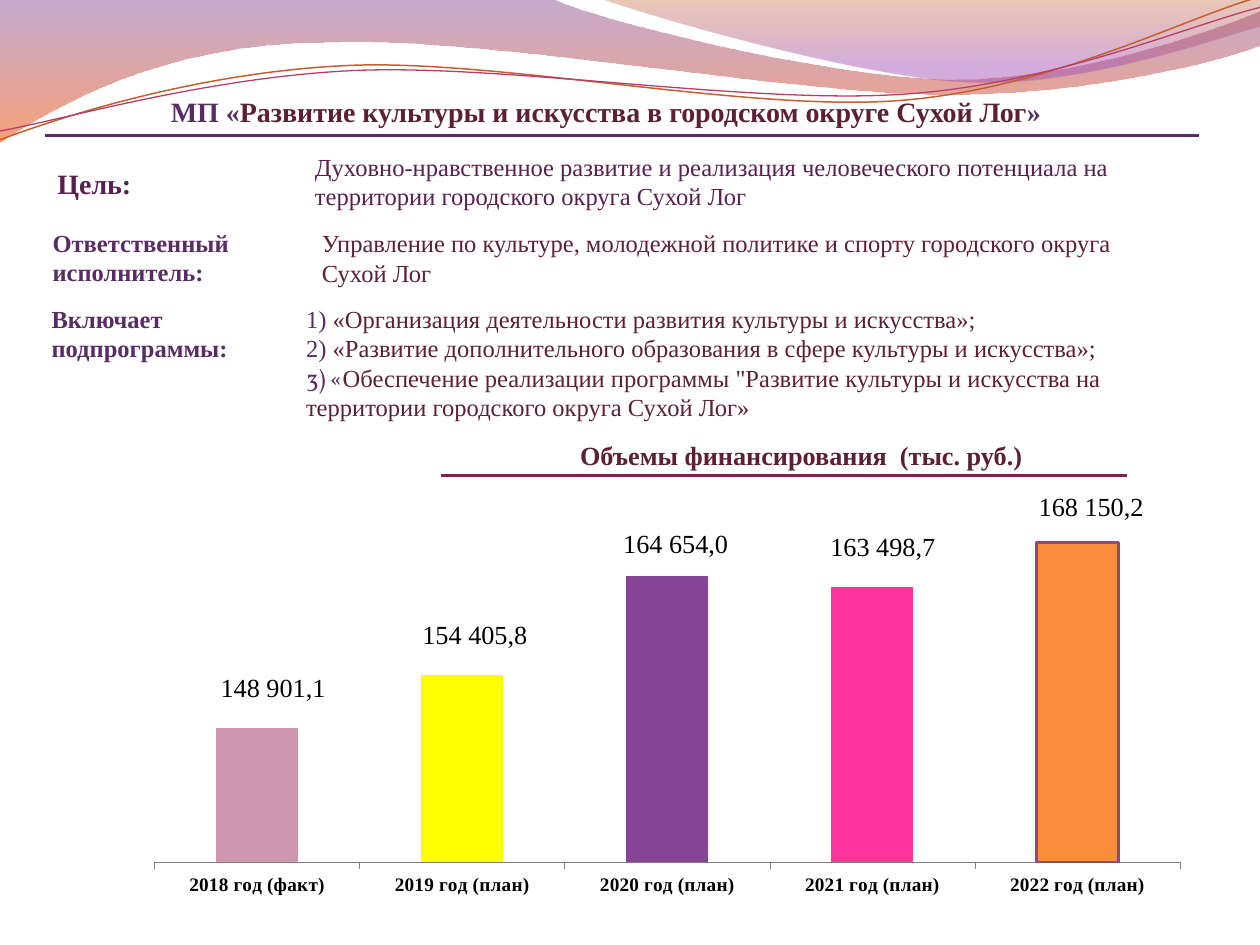
from dataclasses import dataclass

from lxml import etree
from pptx import Presentation
from pptx.chart.data import CategoryChartData
from pptx.dml.color import RGBColor as Rgb
from pptx.enum.chart import XL_CHART_TYPE as ChartType, XL_LABEL_POSITION as LabelPosition
from pptx.enum.chart import XL_TICK_MARK as TickMark
from pptx.enum.shapes import MSO_CONNECTOR as Connector
from pptx.enum.text import PP_ALIGN as Align
from pptx.oxml import parse_xml
from pptx.oxml.ns import nsdecls, qn
from pptx.util import Cm, Pt


@dataclass(frozen=True)
class Theme:
    serif: str = "Times New Roman"
    accent_font: str = "Vollkorn"
    violet: str = "5A2C64"
    plum: str = "591F4D"
    wine: str = "5C1F34"
    rule: str = "772754"
    axis: str = "808080"
    black: str = "000000"
    orange: str = "C45F30"
    pink: str = "B83D68"
    bar_border: str = "8B4A82"
    title: int = 16
    heading: int = 15
    body: int = 14
    axis_size: int = 11


@dataclass(frozen=True)
class Box:
    """A region of the page, in centimetres."""
    left: float
    top: float
    width: float
    height: float

    def inner(self, left, top, width, height):
        return Box(self.left + left, self.top + top, width, height)

    def lengths(self):
        return Cm(self.left), Cm(self.top), Cm(self.width), Cm(self.height)


THEME = Theme()

# Each wave is a start and its segments: one point is a line, three are a Bézier curve.
BACK_WAVE = [(0, 0), [(11.18, 0)],
             [(12.09, 0.43), (16.87, 1.6), (19.25, 1.6)],
             [(21.67, 1.6), (24.33, 0.66), (25.4, 0.23)], [(25.4, 0.91)],
             [(24.97, 1.12), (22.1, 1.93), (18.95, 1.9)],
             [(15.8, 1.9), (9.7, 0.71), (6.53, 0.86)],
             [(3.28, 0.89), (1.17, 2.11), (0, 2.87)]]
FRONT_WAVE = [(12.17, 0), [(12.93, 0.28), (17.32, 1.57), (19.53, 1.65)],
              [(21.74, 1.75), (24.41, 0.81), (25.4, 0.53)], [(25.4, 0)]]
ORANGE_LINE = [(0, 2.82), [(1.22, 2.36), (4.01, 1.45), (7.04, 1.32)],
               [(10.03, 1.19), (15.06, 2.26), (18.11, 2.03)],
               [(21.16, 1.8), (23.83, 0.38), (25.35, -0.05)]]
PINK_LINE = [(0, 2.64), [(1.19, 2.44), (4.17, 1.55), (7.19, 1.42)],
             [(10.24, 1.3), (15.16, 2.11), (18.21, 1.9)],
             [(21.23, 1.7), (23.9, 0.53), (25.4, 0.15)]]

# Category, value, bar colour, label shift as shares of the chart.
FUNDING = [("2018 год (факт)", 148901.1, "CF96B0", 0.015, -0.05),
           ("2019 год (план)", 154405.8, "FFFF00", 0.012, -0.05),
           ("2020 год (план)", 164654, "874396", 0.008, -0.03),
           ("2021 год (план)", 163498.7, "FF3399", 0.01, -0.05),
           ("2022 год (план)", 168150.2, "FA8D3D", 0.013, -0.04)]


def style_font(font, size, color, bold=False, name=THEME.serif):
    font.name, font.size, font.bold = name, Pt(size), bold
    font.color.rgb = Rgb.from_string(color)


def add_text(page, box, paragraphs, size, color, bold=False, align=Align.LEFT):
    """Each paragraph is a list of (text, colour, font); None keeps the paragraph's own."""
    frame = page.shapes.add_textbox(*box.lengths()).text_frame
    frame.word_wrap = True
    for index, spans in enumerate(paragraphs):
        para = frame.add_paragraph() if index else frame.paragraphs[0]
        para.alignment = align
        style_font(para.font, size, color, bold)
        for text, span_color, span_font in spans:
            span = para.add_run()
            span.text = text
            style_font(span.font, size, span_color or color, bold, span_font or THEME.serif)


def add_rule(page, box, color):
    left, top, width, _ = box.lengths()
    rule = page.shapes.add_connector(Connector.STRAIGHT, left, top, left + width, top)
    rule.line.color.rgb, rule.line.width = Rgb.from_string(color), Pt(1.5)
    etree.SubElement(rule._element.spPr, qn("a:effectLst"))


def add_outline(page, box, outline, close):
    """Build the outline through its end points, then bend the curved segments."""
    start, *segments = outline
    ends = [start] + [segment[-1] for segment in segments]
    first, *rest = [(Cm(box.left + x), Cm(box.top + y)) for x, y in ends]
    builder = page.shapes.build_freeform(*first)
    builder.add_line_segments(rest, close=close)
    shape = builder.convert_to_shape()
    shape.shadow.inherit = False
    left, top = (min(end[axis] for end in ends) for axis in (0, 1))
    lines = shape._element.findall(".//" + qn("a:lnTo"))
    for line, segment in zip(lines, segments):
        if len(segment) == 3:
            curve = etree.Element(qn("a:cubicBezTo"))
            for x, y in segment:
                etree.SubElement(curve, qn("a:pt"), x=str(Cm(x - left)), y=str(Cm(y - top)))
            line.getparent().replace(line, curve)
    return shape


def add_waves(page, box):
    fills = [(BACK_WAVE, [(0, "834591", 45), (1, "F35307", 55)]),
             (FRONT_WAVE, [(0, "B74915", 30), (0.8, "A14BB4", 45)])]
    for outline, stops in fills:
        wave = add_outline(page, box, outline, True)
        wave.line.fill.background()
        wave.fill.gradient()
        wave.fill.gradient_angle = 270
        for stop, (position, color, opacity) in zip(wave.fill.gradient_stops, stops):
            stop.position = position
            stop.color.rgb = Rgb.from_string(color)
            tint = stop._gs.find(qn("a:srgbClr"))
            etree.SubElement(tint, qn("a:alpha")).set("val", str(opacity * 1000))
    for outline, color, width in [(ORANGE_LINE, THEME.orange, 0.85),
                                  (PINK_LINE, THEME.pink, 0.75)]:
        curve = add_outline(page, box, outline, False)
        curve.fill.background()
        curve.line.color.rgb, curve.line.width = Rgb.from_string(color), Pt(width)


def add_headline(page, box):
    spans = [("МП «", None, None),
             ("Развитие культуры и искусства в городском округе Сухой Лог", THEME.wine, None),
             ("»", None, None)]
    add_text(page, box.inner(0.61, 0, 21.41, 0.94), [spans],
             THEME.title, THEME.violet, True, Align.CENTER)
    add_rule(page, box.inner(0, box.height, box.width, 0), THEME.violet)


def add_details(page, box):
    programs = [
        [("1) ", THEME.violet, None),
         ("«Организация деятельности развития культуры и искусства»;", None, None)],
        [("2) ", THEME.violet, None),
         ("«Развитие дополнительного образования в сфере культуры и искусства»;", None, None)],
        [("3) «", THEME.violet, THEME.accent_font),
         ('Обеспечение реализации программы "Развитие культуры и искусства на '
          "территории городского округа Сухой Лог»", None, None)]]
    goal = [[("Духовно-нравственное развитие и реализация человеческого потенциала на "
              "территории городского округа Сухой Лог", None, None)]]
    owner = [[("Управление по культуре, молодежной политике и спорту городского округа "
               "Сухой Лог", None, None)]]
    rows = [("Цель:", (0.12, 0.31, 3, 0.94), THEME.title, THEME.plum,
             goal, (5.31, 0.01, 17.6, 1.45), THEME.plum),
            ("Ответственный исполнитель:", (0.02, 1.55, 4.6, 1.45), THEME.body, THEME.violet,
             owner, (5.45, 1.56, 17.32, 1.45), THEME.wine),
            ("Включает подпрограммы:", (0, 3.08, 5.1, 1.45), THEME.body, THEME.violet,
             programs, (5.13, 3.08, 17.88, 2.64), THEME.wine)]
    for label, label_area, size, label_color, content, area, color in rows:
        add_text(page, box.inner(*label_area), [[(label, None, None)]], size, label_color, True)
        add_text(page, box.inner(*area), content, THEME.body, color)


def add_funding_heading(page, box):
    add_text(page, box.inner(1.27, 0, 11.99, 0.89),
             [[("Объемы финансирования  (тыс. руб.)", None, None)]],
             THEME.heading, THEME.wine, True, Align.CENTER)
    add_rule(page, box.inner(0, box.height, box.width, 0), THEME.rule)


def manual_layout(**values):
    items = "".join(f'<c:{name} val="{value}"/>' for name, value in values.items())
    return parse_xml(f'<c:layout {nsdecls("c")}><c:manualLayout>{items}'
                     "</c:manualLayout></c:layout>")


def add_funding_chart(page, box):
    data = CategoryChartData()
    data.categories = [row[0] for row in FUNDING]
    data.add_series("Series 1", [row[1] for row in FUNDING])
    chart = page.shapes.add_chart(ChartType.COLUMN_CLUSTERED, *box.lengths(), data).chart
    chart.has_legend = chart.has_title = False
    style_font(chart.font, 18, THEME.black, name=THEME.accent_font)
    area = chart._chartSpace.xpath(".//c:plotArea")[0]
    for old in area.findall(qn("c:layout")):
        area.remove(old)
    area.insert(0, manual_layout(layoutTarget="inner", xMode="edge", yMode="edge",
                                 x=0.038, y=0.047, w=0.962, h=0.861))
    values, years = chart.value_axis, chart.category_axis
    values.visible = values.has_major_gridlines = False
    values.minimum_scale, values.maximum_scale = 135000, 171200
    years.major_tick_mark = TickMark.OUTSIDE
    years.format.line.color.rgb, years.format.line.width = Rgb.from_string(THEME.axis), Pt(0.25)
    style_font(years.tick_labels.font, THEME.axis_size, THEME.black, True)
    plot = chart.plots[0]
    plot.gap_width, plot.vary_by_categories = 150, False
    series = plot.series[0]
    series.format.fill.solid()
    series.format.fill.fore_color.rgb = Rgb.from_string(THEME.pink)
    labels = series.data_labels
    labels.show_value = True
    style_font(labels.font, THEME.heading, THEME.black, True)
    for leader in labels._element.findall(qn("c:showLeaderLines")):
        leader.set("val", "0")
    for index, (_, value, color, shift_x, shift_y) in enumerate(FUNDING):
        point = series.points[index]
        point.format.fill.solid()
        point.format.fill.fore_color.rgb = Rgb.from_string(color)
        label = point.data_label
        para = label.text_frame.paragraphs[0]
        para.add_run().text = f"{value:,.1f}".replace(",", " ").replace(".", ",")
        style_font(para.font, THEME.heading, THEME.black)
        label.position = LabelPosition.OUTSIDE_END
        label._get_or_add_dLbl().insert(1, manual_layout(x=shift_x, y=shift_y))
    border = series.points[len(FUNDING) - 1].format.line
    border.color.rgb, border.width = Rgb.from_string(THEME.bar_border), Pt(1.5)


def main():
    deck = Presentation()
    deck.slide_width, deck.slide_height = Cm(25.4), Cm(19.05)
    page = deck.slides.add_slide(deck.slide_layouts[6])
    add_waves(page, Box(0, 0, 25.4, 2.87))
    add_headline(page, Box(0.9, 1.78, 23.28, 0.95))
    add_details(page, Box(0.79, 2.92, 23.01, 5.72))
    add_funding_heading(page, Box(8.89, 8.74, 13.82, 0.85))
    add_funding_chart(page, Box(2.3, 9.93, 21.49, 8.2))
    deck.save("out.pptx")


if __name__ == "__main__":
    main()
